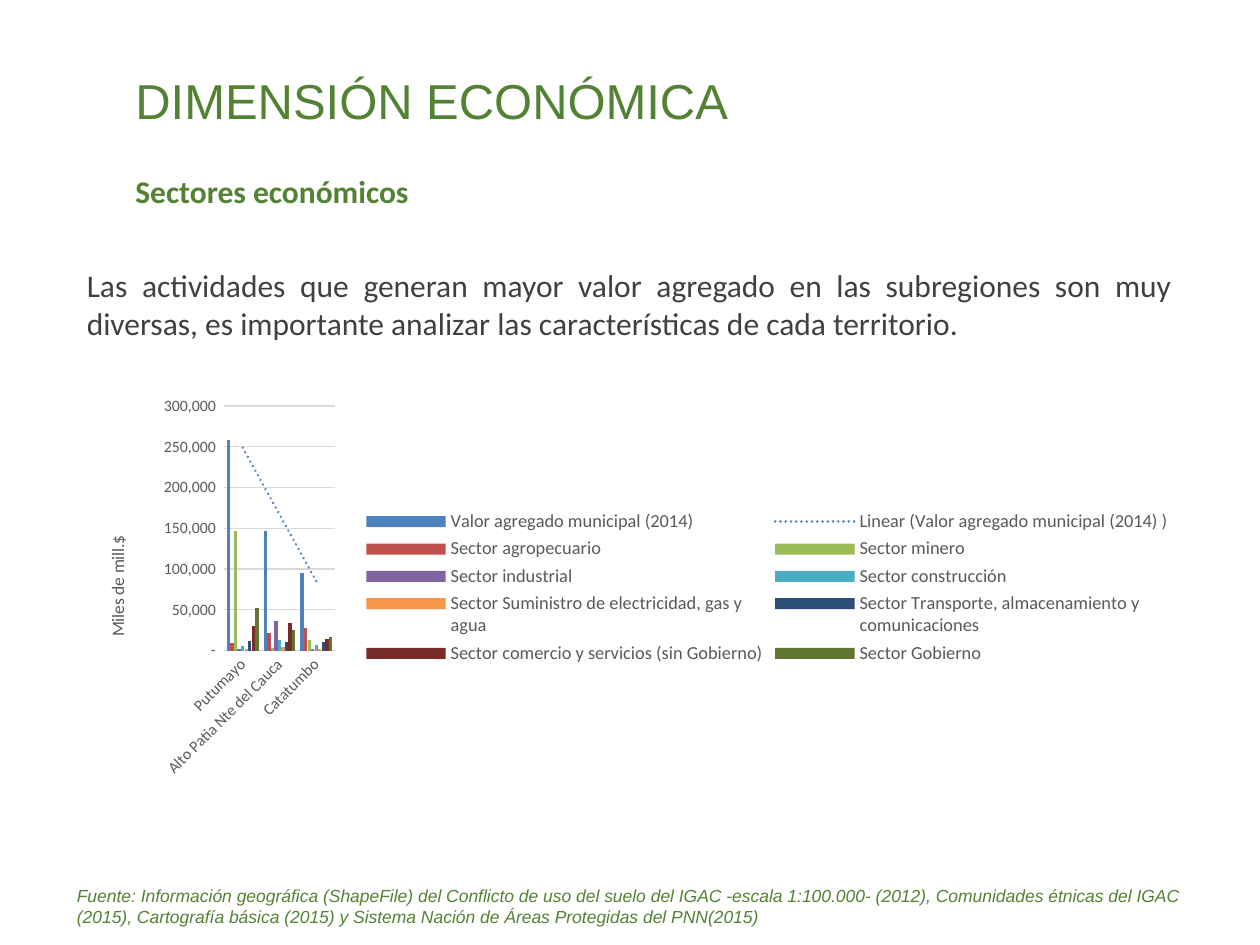
from lxml import etree
from pptx import Presentation
from pptx.chart.data import CategoryChartData
from pptx.dml.color import RGBColor
from pptx.enum.chart import XL_CHART_TYPE as ChartType, XL_LEGEND_POSITION as LegendPosition
from pptx.enum.chart import XL_TICK_MARK as TickMark
from pptx.enum.text import MSO_ANCHOR as Anchor, PP_ALIGN as Align
from pptx.oxml import parse_xml
from pptx.oxml.ns import nsdecls, qn
from pptx.util import Cm, Pt

COLORS = {"green": "548235", "body": "404040", "label": "595959",
          "grid": "D9D9D9", "trend": "4F81BD"}

# Content: text, box (left, top, width, height in cm), font, size, colour, options
TEXTS = [
    ("DIMENSIÓN ECONÓMICA", (2.48, 0.68, 22, 2.67), "Arial", 28, "green",
     {"anchor": Anchor.MIDDLE}),
    ("Sectores económicos", (2.48, 3.35, 11.38, 1.02), "Calibri", 18, "green",
     {"bold": True}),
    ("Las actividades que generan mayor valor agregado en las subregiones son muy "
     "diversas, es importante analizar las características de cada territorio.",
     (1.5, 5.24, 22.38, 2.57), "Calibri", 18, "body", {"align": Align.JUSTIFY}),
    ("Fuente: Información geográfica (ShapeFile) del Conflicto de uso del suelo del IGAC "
     "-escala 1:100.000- (2012), Comunidades étnicas del IGAC (2015), Cartografía básica "
     "(2015) y Sistema Nación de Áreas Protegidas del PNN(2015)",
     (1.3, 17.71, 23.6, 1.12), "Arial", 10, "green", {"italic": True}),
]

CHART_BOX = (1.63, 7.87, 22.25, 7.95)
SUBREGIONS = ["Putumayo", "Alto Patia Nte del Cauca", "Catatumbo"]
SECTORS = [
    ("Valor agregado municipal (2014) ", (259000, 147000, 95000), "4F81BD"),
    ("Sector agropecuario", (9000, 22000, 28000), "C0504D"),
    ("Sector minero", (147000, 3000, 13000), "9BBB59"),
    ("Sector industrial", (2000, 36000, 2000), "8064A2"),
    ("Sector construcción", (5000, 13000, 7000), "4BACC6"),
    ("Sector Suministro de electricidad, gas y agua", (2000, 4000, 2000), "F79646"),
    ("Sector Transporte, almacenamiento y comunicaciones", (12000, 11000, 11000), "2C4D75"),
    ("Sector comercio y servicios (sin Gobierno)", (30000, 34000, 14000), "772C2A"),
    ("Sector Gobierno", (52000, 25000, 17000), "5F7530"),
]
NUMBER_FORMAT = '_(* #,##0_);_(* \\(#,##0\\);_(* "-"_);_(@_)'


def style_font(font, name, size, color, bold=False, italic=False):
    font.name, font.size, font.bold, font.italic = name, Pt(size), bold, italic
    font.color.rgb = RGBColor.from_string(COLORS[color])


def add_text(slide, text, box, font, size, color, options):
    shape = slide.shapes.add_textbox(*map(Cm, box))
    frame = shape.text_frame
    frame.word_wrap = True
    frame.vertical_anchor = options.get("anchor", Anchor.TOP)
    frame.text = text
    paragraph = frame.paragraphs[0]
    paragraph.alignment = options.get("align", Align.LEFT)
    style_font(paragraph.runs[0].font, font, size, color,
               options.get("bold", False), options.get("italic", False))


def set_layout(element, fractions, inner=False):
    """Place a chart part by fractions of the chart: x, y and optionally w, h."""
    for old in element.findall(qn("c:layout")):
        element.remove(old)
    layout = parse_xml(f"<c:layout {nsdecls('c')}><c:manualLayout/></c:layout>")
    values = [("layoutTarget", "inner")] if inner else []
    values += [("xMode", "edge"), ("yMode", "edge"), *zip("xywh", fractions)]
    for tag, value in values:
        etree.SubElement(layout[0], qn(f"c:{tag}")).set("val", str(value))
    overlay = element.find(qn("c:overlay"))
    if overlay is None:
        element.insert(0, layout)
    else:
        overlay.addprevious(layout)


def add_trend_line(series):
    trend_line = parse_xml(
        f'<c:trendline {nsdecls("c", "a")}><c:spPr><a:ln w="19050" cap="rnd"><a:solidFill>'
        f'<a:srgbClr val="{COLORS["trend"]}"/></a:solidFill><a:prstDash val="sysDot"/></a:ln>'
        '</c:spPr><c:trendlineType val="linear"/><c:dispRSqr val="0"/><c:dispEq val="0"/>'
        '</c:trendline>')
    series._element.find(qn("c:cat")).addprevious(trend_line)


def add_sector_chart(slide):
    data = CategoryChartData(number_format=NUMBER_FORMAT)
    data.categories = SUBREGIONS
    for name, values, _ in SECTORS:
        data.add_series(name, values)
    chart = slide.shapes.add_chart(ChartType.COLUMN_CLUSTERED, *map(Cm, CHART_BOX), data).chart
    chart.has_title = False
    style_font(chart.font, "Calibri", 10, "label")

    # Columns and trend line
    plot = chart.plots[0]
    plot.vary_by_categories = False
    plot.gap_width, plot.overlap = 150, -5
    for series, (_, _, color) in zip(plot.series, SECTORS):
        series.format.fill.solid()
        series.format.fill.fore_color.rgb = RGBColor.from_string(color)
    add_trend_line(plot.series[0])
    set_layout(chart._chartSpace.chart.plotArea, (0.13, 0.04, 0.1, 0.62), inner=True)

    # Axes
    category_axis, value_axis = chart.category_axis, chart.value_axis
    for axis in (category_axis, value_axis):
        axis.major_tick_mark = axis.minor_tick_mark = TickMark.NONE
        style_font(axis.tick_labels.font, "Calibri", 9, "label")
    category_axis._element.find(qn("c:txPr")).find(qn("a:bodyPr")).set("rot", "-2700000")
    value_axis.minimum_scale, value_axis.maximum_scale = 0, 300000
    value_axis.major_unit = 50000
    value_axis.tick_labels.number_format = NUMBER_FORMAT
    value_axis.tick_labels.number_format_is_linked = False
    value_axis.format.line.fill.background()
    for line in (category_axis.format.line, value_axis.major_gridlines.format.line):
        line.color.rgb = RGBColor.from_string(COLORS["grid"])
        line.width = Pt(0.75)

    # Value axis title
    title = value_axis.axis_title
    title.text_frame.text = "Miles de mill.$"
    style_font(title.text_frame.paragraphs[0].runs[0].font, "Calibri", 10, "label")
    body = title._element.find(".//" + qn("a:bodyPr"))
    body.set("rot", "-5400000")
    body.set("vert", "horz")
    set_layout(title._element, (0.02, 0.36))

    # Legend
    chart.has_legend = True
    legend = chart.legend
    legend.position = LegendPosition.RIGHT
    legend.include_in_layout = False
    style_font(legend.font, "Calibri", 10.5, "label")


def main():
    presentation = Presentation()
    presentation.slide_width, presentation.slide_height = Cm(25.4), Cm(19.05)
    slide = presentation.slides.add_slide(presentation.slide_layouts[6])
    for item in TEXTS:
        add_text(slide, *item)
    add_sector_chart(slide)
    presentation.save("out.pptx")


if __name__ == "__main__":
    main()
